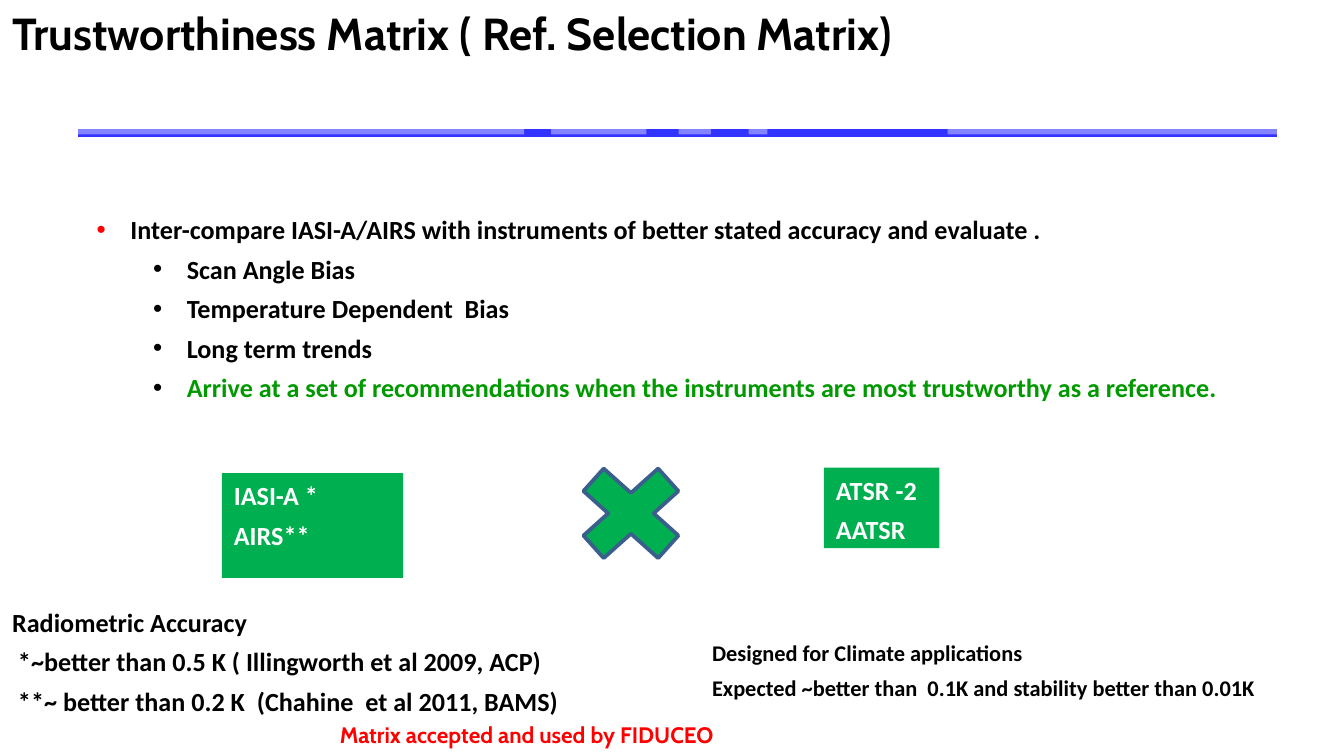
from dataclasses import dataclass

from lxml import etree
from pptx import Presentation
from pptx.dml.color import RGBColor
from pptx.enum.shapes import MSO_CONNECTOR, MSO_SHAPE
from pptx.enum.text import MSO_ANCHOR, PP_ALIGN
from pptx.oxml.ns import qn
from pptx.util import Inches, Pt

RECT = MSO_SHAPE.RECTANGLE
CROSS = MSO_SHAPE.MATH_MULTIPLY
LINE = MSO_CONNECTOR.STRAIGHT
TOP = MSO_ANCHOR.TOP
LEFT = PP_ALIGN.LEFT


@dataclass(frozen=True)
class Theme:
    """Hold the colours, fonts and sizes of the slide."""
    ink: str = "000000"
    white: str = "FFFFFF"
    red: str = "FF0000"
    leaf: str = "009900"
    green: str = "00B050"
    blue: str = "3333FF"
    edge: str = "3A5F8C"
    head: str = "Cabin"
    body: str = "Calibri"
    title: float = 24
    text: float = 14
    note: float = 12
    gap: float = 4.3


THEME = Theme()


def paint(shape, color):
    """Fill a shape with a plain colour, without line or shadow."""
    shape.shadow.inherit = False
    shape.fill.solid()
    shape.fill.fore_color.rgb = RGBColor.from_string(color)
    shape.line.fill.background()


def add_bullet(para, color, left, hang):
    """Give a paragraph a coloured bullet and a hanging indent."""
    props = para._p.get_or_add_pPr()
    props.set("marL", str(Inches(left)))
    props.set("indent", str(-Inches(hang)))
    tint = etree.SubElement(props, qn("a:buClr"))
    etree.SubElement(tint, qn("a:srgbClr"), val=color)
    etree.SubElement(props, qn("a:buFont"), typeface="Arial")
    etree.SubElement(props, qn("a:buChar"), char="•")


def style(para, size, color, face):
    """Set the bold font of a paragraph."""
    font = para.font
    font.size, font.name, font.bold = Pt(size), face, True
    font.color.rgb = RGBColor.from_string(color)
    para.alignment = LEFT


def write(shape, lines, size=THEME.text, color=THEME.ink, face=THEME.body, inset=(0.09, 0.04)):
    """Write lines of text, level and colour into a shape."""
    frame = shape.text_frame
    frame.word_wrap = True
    frame.vertical_anchor = TOP
    frame.margin_left = frame.margin_right = Inches(inset[0])
    frame.margin_top = frame.margin_bottom = Inches(inset[1])
    for num, line in enumerate(lines):
        para = frame.add_paragraph() if num else frame.paragraphs[0]
        if num:
            para.space_before = Pt(THEME.gap)
        if isinstance(line, tuple):
            line, level, color = line
            para.level = level
            add_bullet(para, THEME.ink if level else THEME.red, 0.67 if level else 0.25, 0.25)
        para.text = line
        style(para, size, color, face)


def add_text(slide, box, lines, **look):
    """Add a text box holding the given lines."""
    write(slide.shapes.add_textbox(*map(Inches, box)), lines, **look)


def add_rule(slide, box):
    """Draw the blue rule and the pale veils over parts of it."""
    left, top, width, height = box
    mid = Inches(top + 0.1)
    rule = slide.shapes.add_connector(LINE, Inches(left + 0.58), mid, Inches(left + width - 0.5), mid)
    rule.line.color.rgb = RGBColor.from_string(THEME.blue)
    rule.line.width = Pt(4.5)
    etree.SubElement(rule._element.spPr, qn("a:effectLst"))
    for start, span in ((0, 3.9), (4.1, 0.71), (5.05, 0.24), (5.57, 0.14), (7.05, 2.95)):
        veil = slide.shapes.add_shape(RECT, Inches(left + start), Inches(top), Inches(span), Inches(height))
        paint(veil, THEME.white)
        tint = veil._element.spPr.find(qn("a:solidFill"))[0]
        etree.SubElement(tint, qn("a:alpha"), val="40000")


def add_goals(slide, box):
    """Write the bulleted aims of the comparison."""
    add_text(slide, box, (
        ("Inter-compare IASI-A/AIRS with instruments of better stated accuracy and evaluate .", 0, THEME.ink),
        ("Scan Angle Bias", 1, THEME.ink),
        ("Temperature Dependent  Bias", 1, THEME.ink),
        ("Long term trends", 1, THEME.ink),
        ("Arrive at a set of recommendations when the instruments are most trustworthy as a reference.",
         1, THEME.leaf),
    ))


def add_pair(slide, box):
    """Draw the two instrument cards with a cross between them."""
    left, top, _, _ = box
    cards = (
        ((0, 0.18, 1.35, 0.78), ("IASI-A *", "AIRS**")),
        ((4.48, 0.14, 0.86, 0.6), ("ATSR -2", "AATSR")),
    )
    for (x, y, wide, high), lines in cards:
        card = slide.shapes.add_shape(RECT, Inches(left + x), Inches(top + y), Inches(wide), Inches(high))
        paint(card, THEME.green)
        write(card, lines, color=THEME.white, inset=(0.09, 0.05))
    cross = slide.shapes.add_shape(CROSS, Inches(left + 2.51), Inches(top), Inches(1.07), Inches(0.96))
    paint(cross, THEME.green)
    cross.line.color.rgb = RGBColor.from_string(THEME.edge)
    cross.line.width = Pt(2)


def add_notes(slide, box):
    """Write the accuracy notes and the closing line."""
    left, top, _, _ = box
    add_text(slide, (left, top, 4.81, 0.78), (
        "Radiometric Accuracy",
        " *~better than 0.5 K ( Illingworth et al 2009, ACP)",
        " **~ better than 0.2 K  (Chahine  et al 2011, BAMS)",
    ))
    add_text(slide, (left + 5.2, top + 0.24, 4.3, 0.56), (
        "Designed for Climate applications",
        "Expected ~better than  0.1K and stability better than 0.01K",
    ), size=THEME.note, inset=(0.1, 0.05))
    add_text(slide, (left + 2.43, top + 0.85, 3.43, 0.3), ("Matrix accepted and used by FIDUCEO",),
             size=THEME.note, color=THEME.red, face=THEME.head, inset=(0.1, 0.05))


def main():
    """Build and save the slide."""
    deck = Presentation()
    deck.slide_width = Inches(10)
    deck.slide_height = Inches(10) * 9 // 16
    slide = deck.slides.add_slide(deck.slide_layouts[6])
    add_rule(slide, (0, 0.89, 10, 0.11))
    add_text(slide, (0, 0, 8.88, 0.78), ("Trustworthiness Matrix ( Ref. Selection Matrix)",),
             size=THEME.title, face=THEME.head)
    add_goals(slide, (0.63, 1.55, 8.86, 1.98))
    add_pair(slide, (1.65, 3.34, 5.34, 0.96))
    add_notes(slide, (0, 4.47, 10, 1.15))
    deck.save("out.pptx")


if __name__ == "__main__":
    main()
